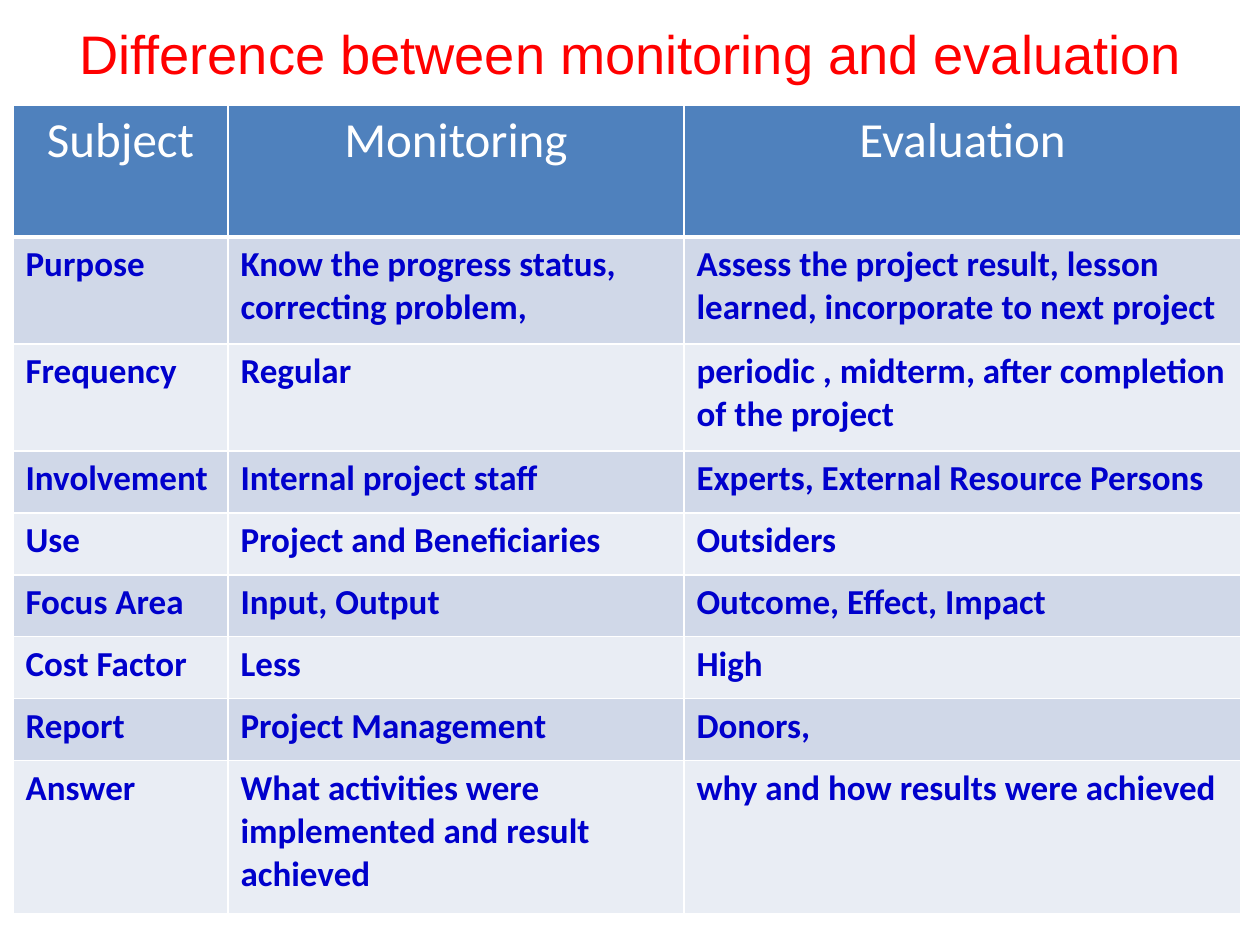
from lxml.etree import SubElement
from pptx import Presentation
from pptx.dml.color import RGBColor
from pptx.enum.text import MSO_ANCHOR, PP_ALIGN
from pptx.oxml.ns import qn
from pptx.util import Emu, Pt

PX = 914400 // 126
RED = RGBColor(0xFF, 0x00, 0x00)
WHITE = RGBColor(0xFF, 0xFF, 0xFF)
NAVY = RGBColor(0x00, 0x00, 0xCC)
HEADER_BLUE = RGBColor(0x4F, 0x81, 0xBD)
BAND_DARK = RGBColor(0xD0, 0xD8, 0xE8)
BAND_LIGHT = RGBColor(0xE9, 0xED, 0xF4)

TITLE_FORMAT = {"name": "Arial", "size": Pt(31), "color": RED}
HEADER_FORMAT = {"name": "Calibri", "size": Pt(28), "bold": False, "color": WHITE}
BODY_FORMAT = {"name": "Calibri", "size": Pt(20), "bold": True, "color": NAVY}

COLUMN_WIDTHS = [215, 456, 557]
ROW_HEIGHTS = [132, 107, 107] + [62] * 5 + [153]
COMPARISON = [
    ("Subject", "Monitoring", "Evaluation"),
    ("Purpose", "Know the progress status, correcting problem,",
     "Assess the project result, lesson learned, incorporate to next project"),
    ("Frequency", "Regular", "periodic , midterm, after completion of the project"),
    ("Involvement", "Internal project staff", "Experts, External Resource Persons"),
    ("Use", "Project and Beneficiaries", "Outsiders"),
    ("Focus Area", "Input, Output", "Outcome, Effect, Impact"),
    ("Cost Factor", "Less", "High"),
    ("Report", "Project Management", "Donors,"),
    ("Answer", "What activities were implemented and result achieved",
     "why and how results were achieved"),
]


class SlideBuilder:
    def __init__(self, deck):
        self.page = deck.slides.add_slide(deck.slide_layouts[6])

    def add_text(self, frame, text, style, align):
        para = frame.paragraphs[0]
        para.alignment = align
        span = para.add_run()
        span.text = text
        for key, value in style.items():
            if key == "color":
                span.font.color.rgb = value
            else:
                setattr(span.font, key, value)

    def add_title(self, text, *bounds):
        box = self.page.shapes.add_textbox(*(Emu(n * PX) for n in bounds))
        frame = box.text_frame
        settings = {"word_wrap": True, "vertical_anchor": MSO_ANCHOR.MIDDLE,
                    "margin_left": 0, "margin_right": 0}
        for key, value in settings.items():
            setattr(frame, key, value)
        self.add_text(frame, text, TITLE_FORMAT, PP_ALIGN.CENTER)

    def add_borders(self, cell, widths):
        properties = cell._tc.get_or_add_tcPr()
        for side, width in widths.items():
            line = SubElement(properties, qn(f"a:ln{side}"), w=str(Pt(width)))
            fill = SubElement(line, qn("a:solidFill"))
            SubElement(fill, qn("a:srgbClr"), val=str(WHITE))

    def add_table(self, rows, left, top, widths, heights):
        bounds = (left, top, sum(widths), sum(heights))
        table = self.page.shapes.add_table(
            len(rows), len(widths), *(Emu(n * PX) for n in bounds)).table
        for column, width in zip(table.columns, widths):
            column.width = Emu(width * PX)
        for row, height in zip(table.rows, heights):
            row.height = Emu(height * PX)
        for index, texts in enumerate(rows):
            if index == 0:
                style, align, color = HEADER_FORMAT, PP_ALIGN.CENTER, HEADER_BLUE
            else:
                style, align = BODY_FORMAT, PP_ALIGN.LEFT
                color = BAND_DARK if index % 2 else BAND_LIGHT
            edges = {"L": 1, "R": 1, "T": 3 if index == 1 else 1,
                     "B": 3 if index == 0 else 1}
            for column, text in enumerate(texts):
                cell = table.cell(index, column)
                self.add_text(cell.text_frame, text, style, align)
                self.add_borders(cell, edges)
                cell.fill.solid()
                cell.fill.fore_color.rgb = color


def main():
    deck = Presentation()
    deck.slide_width = Emu(1260 * PX)
    deck.slide_height = Emu(945 * PX)
    builder = SlideBuilder(deck)
    builder.add_title("Difference between monitoring and evaluation", 63, 0, 1134, 105)
    builder.add_table(COMPARISON, 13, 105, COLUMN_WIDTHS, ROW_HEIGHTS)
    deck.save("out.pptx")


if __name__ == "__main__":
    main()
